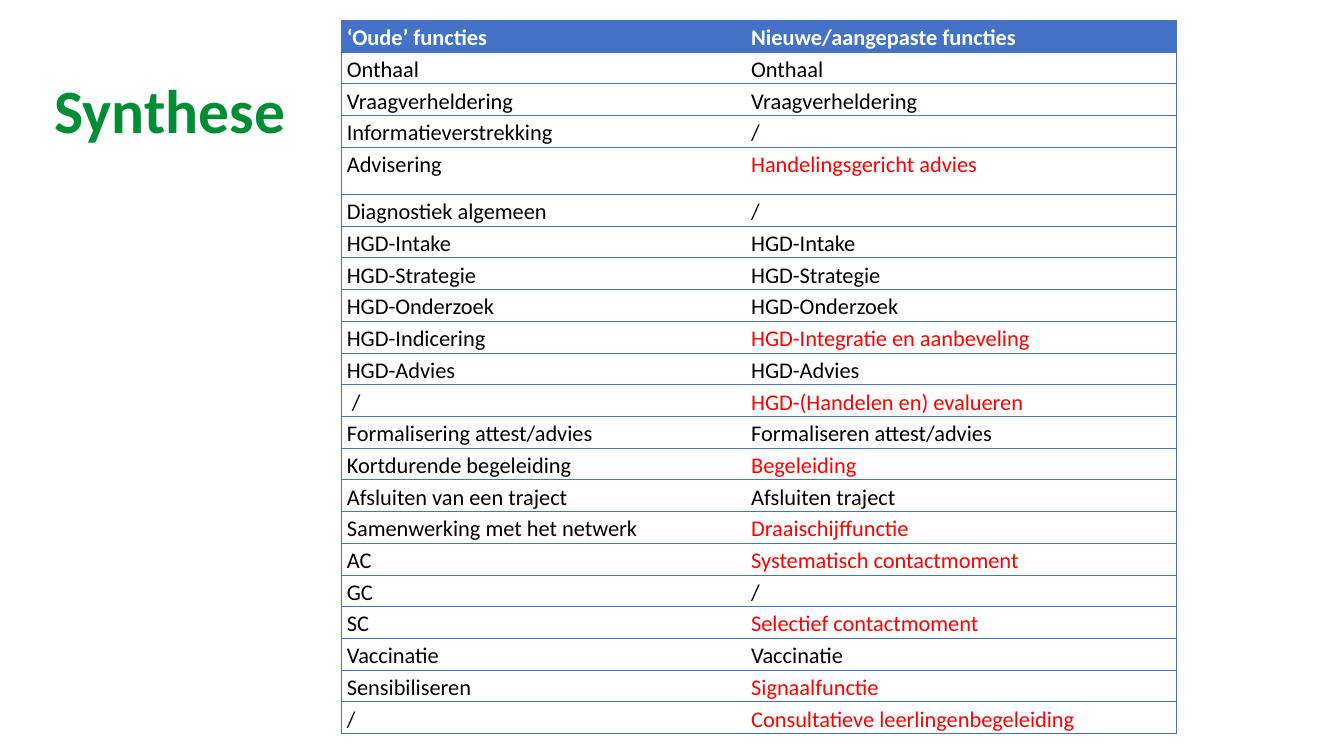
from lxml.etree import SubElement
from pptx import Presentation
from pptx.dml.color import RGBColor
from pptx.enum.text import MSO_ANCHOR
from pptx.oxml.ns import qn
from pptx.util import Inches, Pt

GREEN = RGBColor(0x00, 0x8D, 0x36)
BLUE = RGBColor(0x44, 0x72, 0xC4)
RED = RGBColor(0xFF, 0x00, 0x00)
BLACK = RGBColor(0x00, 0x00, 0x00)
WHITE = RGBColor(0xFF, 0xFF, 0xFF)

HEADINGS = ("‘Oude’ functies", "Nieuwe/aangepaste functies")
FUNCTIONS = [
    ("Onthaal", "Onthaal", BLACK),
    ("Vraagverheldering", "Vraagverheldering", BLACK),
    ("Informatieverstrekking", "/", BLACK),
    ("Advisering", "Handelingsgericht advies", RED),
    ("Diagnostiek algemeen", "/", BLACK),
    ("HGD-Intake", "HGD-Intake", BLACK),
    ("HGD-Strategie", "HGD-Strategie", BLACK),
    ("HGD-Onderzoek", "HGD-Onderzoek", BLACK),
    ("HGD-Indicering", "HGD-Integratie en aanbeveling", RED),
    ("HGD-Advies", "HGD-Advies", BLACK),
    (" /", "HGD-(Handelen en) evalueren", RED),
    ("Formalisering attest/advies", "Formaliseren attest/advies", BLACK),
    ("Kortdurende begeleiding", "Begeleiding", RED),
    ("Afsluiten van een traject", "Afsluiten traject", BLACK),
    ("Samenwerking met het netwerk", "Draaischijffunctie", RED),
    ("AC", "Systematisch contactmoment", RED),
    ("GC", "/", BLACK),
    ("SC", "Selectief contactmoment", RED),
    ("Vaccinatie", "Vaccinatie", BLACK),
    ("Sensibiliseren", "Signaalfunctie", RED),
    ("/", "Consultatieve leerlingenbegeleiding", RED),
]
ADVICE_ROW = 4
ADVICE_HEIGHT = Inches(0.47)
TABLE_HEIGHT = Inches(7.08)
COLUMN_WIDTHS = (Inches(4.01), Inches(4.27))


def write(frame, text, size=16, color=BLACK, bold=False, spacing=1.15):
    paragraph = frame.paragraphs[0]
    paragraph.line_spacing = spacing
    run = paragraph.add_run()
    run.text = text
    run.font.name = "Calibri"
    run.font.size = Pt(size)
    run.font.bold = bold
    run.font.color.rgb = color


def draw_borders(cell, visible_sides):
    properties = cell._tc.get_or_add_tcPr()
    for side in "LRTB":
        line = SubElement(properties, qn(f"a:ln{side}"), w=str(Pt(0.5)))
        if side in visible_sides:
            fill = SubElement(line, qn("a:solidFill"))
            SubElement(fill, qn("a:srgbClr"), val=str(BLUE))
        else:
            SubElement(line, qn("a:noFill"))


presentation = Presentation()
presentation.slide_width = Inches(13.33)
presentation.slide_height = Inches(7.5)
slide = presentation.slides.add_slide(presentation.slide_layouts[6])

title = slide.shapes.add_textbox(
    Inches(0.44), Inches(0.4), Inches(12.38), Inches(1.45)
).text_frame
title.word_wrap = True
title.vertical_anchor = MSO_ANCHOR.MIDDLE
write(title, "Synthese", size=44, color=GREEN, bold=True, spacing=0.9)

overview = slide.shapes.add_table(
    len(FUNCTIONS) + 1, len(HEADINGS),
    Inches(3.39), Inches(0.2), sum(COLUMN_WIDTHS), TABLE_HEIGHT,
).table
overview.horz_banding = False
for column, width in zip(overview.columns, COLUMN_WIDTHS):
    column.width = width
for row in overview.rows:
    row.height = (TABLE_HEIGHT - ADVICE_HEIGHT) // len(FUNCTIONS)
overview.rows[ADVICE_ROW].height = ADVICE_HEIGHT

for row_index, (old, new, new_color) in enumerate([(*HEADINGS, WHITE), *FUNCTIONS]):
    is_heading = row_index == 0
    old_color = WHITE if is_heading else BLACK
    entries = ((old, old_color, "LTB"), (new, new_color, "RTB"))
    for column_index, (text, color, sides) in enumerate(entries):
        cell = overview.cell(row_index, column_index)
        cell.margin_left = cell.margin_right = Inches(0.05)
        cell.margin_top = cell.margin_bottom = 0
        write(cell.text_frame, text, color=color, bold=is_heading)
        draw_borders(cell, sides)
        if is_heading:
            cell.fill.solid()
            cell.fill.fore_color.rgb = BLUE
        else:
            cell.fill.background()

presentation.save("out.pptx")
